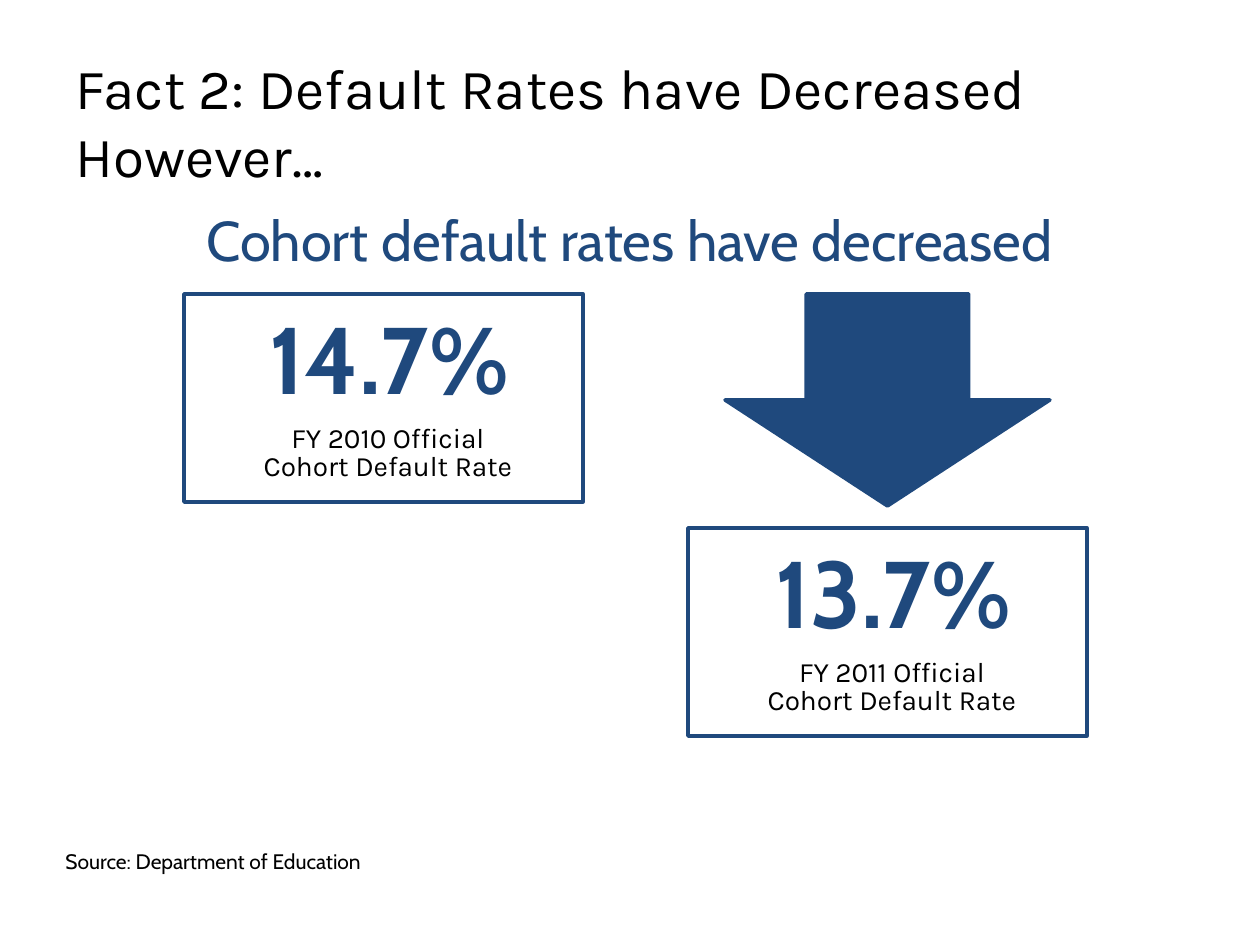
import pptx
import pptx.dml.color
import pptx.enum.shapes
import pptx.enum.text
import pptx.util

NAVY = "1F497D"
BLACK = "000000"
SHAPE = pptx.enum.shapes.MSO_SHAPE
ALIGN = pptx.enum.text.PP_ALIGN
ANCHOR = pptx.enum.text.MSO_ANCHOR


def px(count):
    """Turn pixels into EMU."""
    return pptx.util.Emu(round(count * 914400 / 126))


def color(hue):
    """Turn a hex string into a colour."""
    return pptx.dml.color.RGBColor.from_string(hue)


def write(slide, text, box, size, font="Karla", hue=BLACK, bold=False,
          align=ALIGN.LEFT, anchor=ANCHOR.TOP, wrap=True, pitch=None, inset=6):
    """Place one paragraph of formatted text in a box."""
    frame = slide.shapes.add_textbox(*map(px, box)).text_frame
    frame.word_wrap = wrap
    frame.vertical_anchor = anchor
    frame.margin_top = frame.margin_bottom = px(inset)
    para = frame.paragraphs[0]
    para.text = text
    para.alignment = align
    if pitch:
        para.line_spacing = pptx.util.Pt(pitch)
    for run in para.runs:
        run.font.name = font
        run.font.size = pptx.util.Pt(size)
        run.font.bold = bold
        run.font.color.rgb = color(hue)


def draw(slide, kind, box, fill=None):
    """Place a navy-lined shape, filled or hollow."""
    shape = slide.shapes.add_shape(kind, *map(px, box))
    shape.shadow.inherit = False
    shape.line.color.rgb = color(NAVY)
    shape.line.width = pptx.util.Pt(2)
    if fill:
        shape.fill.solid()
        shape.fill.fore_color.rgb = color(fill)
    else:
        shape.fill.background()


def header(slide, left, top, width):
    """Place the title and the subtitle below it."""
    write(slide, "Fact 2: Default Rates have Decreased However…",
          (left, top, width, 158), 32.4, anchor=ANCHOR.MIDDLE)
    write(slide, "Cohort default rates have decreased",
          (left, top + 157, width, 80), 32, font="Cabin", hue=NAVY,
          align=ALIGN.CENTER)


def card(slide, left, top, width, height, rate, year):
    """Place a framed default rate with its caption."""
    write(slide, f"FY {year} Official\nCohort Default Rate",
          (left + 10, top + 113, width - 11, 94), 16,
          align=ALIGN.CENTER, pitch=16, inset=19)
    write(slide, rate, (left + 63, top, 284, 127), 54, font="Cabin",
          hue=NAVY, bold=True, align=ALIGN.CENTER, wrap=False)
    draw(slide, SHAPE.RECTANGLE, (left, top, width, height))


def main():
    """Build and save the slide."""
    deck = pptx.Presentation()
    deck.slide_width, deck.slide_height = px(1260), px(945)
    slide = deck.slides.add_slide(deck.slide_layouts[6])
    header(slide, 63, 42, 1134)
    card(slide, 184, 294, 399, 208, "14.7%", 2010)
    draw(slide, SHAPE.DOWN_ARROW, (725, 294, 325, 212), fill=NAVY)
    card(slide, 688, 528, 399, 208, "13.7%", 2011)
    write(slide, "Source: Department of Education", (53, 843, 325, 38), 12,
          font="Cabin", wrap=False)
    deck.save("out.pptx")


if __name__ == "__main__":
    main()
